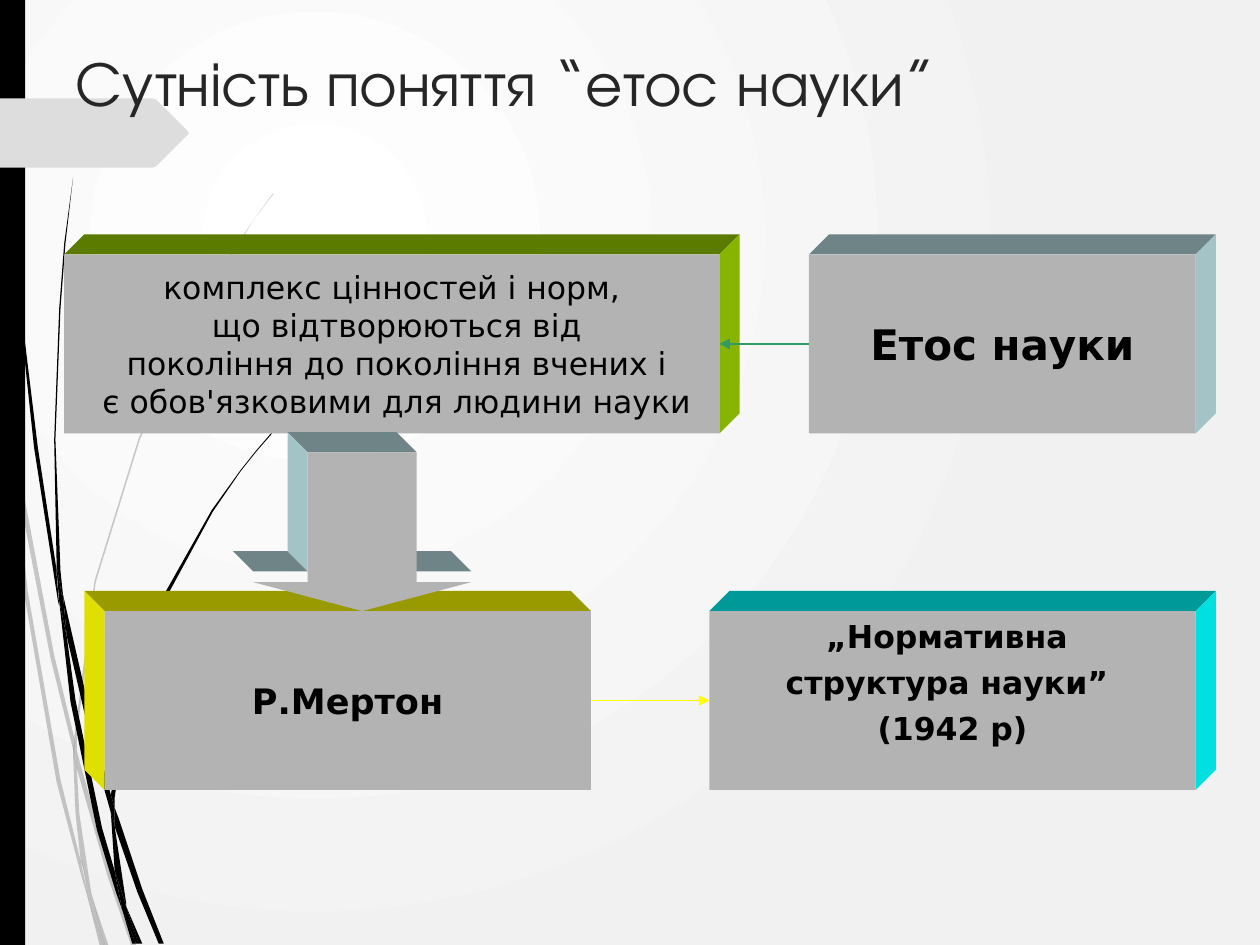
from lxml import etree
from pptx import Presentation
from pptx.dml.color import RGBColor
from pptx.enum import shapes, text
from pptx.oxml import parse_xml
from pptx.oxml.ns import nsdecls, qn
from pptx.util import Inches, Pt

COLORS = {
    "ink": "000000", "title": "262626", "tag": "DDDDDD", "front": "B3B3B3",
    "centre": "FFFFFF", "edge": "F1F1F1",
    "green top": "5A7A00", "green side": "86B400",
    "steel top": "6E8486", "steel side": "A3C3C6",
    "yellow top": "999900", "yellow side": "E0E000",
    "cyan top": "009999", "cyan side": "00E0E0",
    "green line": "339966", "yellow line": "FFFF00",
}
DEPTH = 0.16
BOX_HEIGHT = 1.42

# Outlines of the grass blades, in inches
PALE_BLADES = [
    [(.08, 3.5), (.06, 3.22), (0, 2.82), (0, 2.99), (.07, 3.44)],
    [(.4, 5.22), (.59, 5.99), (.59, 5.86), (.43, 5.2), (.1, 3.45), (.12, 3.76)],
    [(.64, 6.07), (.61, 5.96), (.61, 6.1), (.85, 6.94), (1.04, 7.5), (1.08, 7.5), (.88, 6.92)],
    [(.83, 7.5), (.86, 7.5), (.73, 7.11)],
    [(.64, 6.83), (.48, 6.19), (.22, 4.69), (.12, 3.76), (.08, 3.5), (.19, 4.7), (.45, 6.21),
     (.64, 6.93), (.7, 7.14), (.69, 7.07)],
    [(.58, 5.99), (.6, 6.46), (.64, 6.83), (.67, 6.92), (.73, 7.11), (.72, 7.06), (.63, 6.46),
     (.61, 6.1), (.61, 6.08)],
    [(.61, 5.84), (.76, 4.62), (1.11, 3.49), (1.59, 2.45), (1.87, 1.98), (2.01, 1.75),
     (2.17, 1.54), (2.17, 1.53), (2.01, 1.75), (1.86, 1.97), (1.58, 2.44), (1.1, 3.48),
     (.75, 4.61), (.59, 5.84), (.59, 5.86), (.61, 5.96)],
    [(.7, 7.14), (.79, 7.5), (.82, 7.5)],
    [(.61, 6.08), (.61, 6.1), (.61, 5.96), (.59, 5.86), (.58, 5.99)],
    [(.67, 6.92), (.65, 6.83), (.69, 7.07), (.7, 7.14), (.82, 7.5), (.83, 7.5), (.73, 7.11)],
]
DARK_BLADES = [
    [(.05, 1.1), (.14, 2.33), (.27, 3.55), (.46, 4.77), (.47, 4.81), (.45, 4.57), (.45, 4.53),
     (.3, 3.55), (.15, 2.32), (.06, 1.09), (.04, .48), (.03, 0), (.02, 0), (.03, .48)],
    [(.73, 5.92), (.88, 6.45), (.88, 6.33), (.88, 6.31), (.77, 5.9), (.5, 4.72), (.53, 5.05)],
    [(.94, 6.49), (.91, 6.41), (.91, 6.56), (1.09, 7.08), (1.26, 7.49), (1.3, 7.49), (1.13, 7.06)],
    [(.91, 6.91), (.81, 6.57), (.6, 5.56), (.53, 5.05), (.47, 4.77), (.56, 5.57), (.77, 6.59),
     (.92, 7.08), (.97, 7.22), (.96, 7.17)],
    [(.5, 4.72), (.48, 4.53), (.44, 3.49), (.48, 2.45), (.52, 1.93), (.58, 1.41), (.51, 1.93),
     (.47, 2.45), (.43, 3.49), (.45, 4.49), (.49, 4.72)],
    [(1.1, 7.49), (1.13, 7.49), (1, 7.19)],
    [(.47, 4.77), (.53, 5.05), (.5, 4.72), (.49, 4.72), (.45, 4.49), (.45, 4.53)],
    [(.91, 6.33), (1.03, 5.52), (1.31, 4.76), (1.69, 4.06), (1.91, 3.74), (2.03, 3.59),
     (2.16, 3.44), (2.15, 3.44), (2.03, 3.58), (1.91, 3.73), (1.68, 4.05), (1.29, 4.74),
     (1.01, 5.51), (.88, 6.31), (.91, 6.41)],
    [(.97, 7.22), (1.05, 7.49), (1.08, 7.49)],
    [(.88, 6.45), (.91, 6.91), (.96, 7.06), (1, 7.19), (1, 7.16), (.91, 6.56), (.9, 6.51)],
    [(.88, 6.45), (.9, 6.51), (.91, 6.56), (.91, 6.41), (.88, 6.31), (.88, 6.33)],
    [(.96, 7.06), (.91, 6.91), (.96, 7.17), (.97, 7.22), (1.08, 7.49), (1.1, 7.49), (1, 7.19)],
]
TAG = [(0, .78), (1.21, .78), (1.24, .79), (1.49, 1.04), (1.5, 1.06), (1.49, 1.07),
       (1.24, 1.32), (1.21, 1.33), (0, 1.33)]


class SlideBuilder:
    font = "DejaVu Sans"
    title_font = "TeX Gyre Adventor"

    def __init__(self, slide):
        self.slide = slide

    def paint(self, shape, color, alpha=None):
        shape.shadow.inherit = False
        shape.fill.solid()
        shape.fill.fore_color.rgb = RGBColor.from_string(COLORS[color])
        shape.line.fill.background()
        if alpha is not None:
            fill_color = shape._element.spPr.find(qn("a:solidFill"))[0]
            etree.SubElement(fill_color, qn("a:alpha")).set("val", str(alpha * 1000))
        return shape

    def background(self):
        stops = "".join(
            f'<a:gs pos="{position}"><a:srgbClr val="{COLORS[color]}"/></a:gs>'
            for position, color in ((0, "centre"), (100000, "edge")))
        self.slide.background.fill.solid()
        properties = self.slide._element.cSld.bg.bgPr
        properties.replace(properties[0], parse_xml(
            f'<a:gradFill {nsdecls("a")} rotWithShape="1"><a:gsLst>{stops}</a:gsLst>'
            '<a:path path="circle"><a:fillToRect l="50000" t="50000" r="100000" b="100000"/>'
            '</a:path></a:gradFill>'))

    def preset(self, kind, left, top, width, height, color):
        shape = self.slide.shapes.add_shape(
            kind, Inches(left), Inches(top), Inches(width), Inches(height))
        return self.paint(shape, color)

    def polygon(self, points, color, alpha=None):
        start, *rest = [(Inches(x), Inches(y)) for x, y in points]
        builder = self.slide.shapes.build_freeform(*start)
        builder.add_line_segments(rest, close=True)
        return self.paint(builder.convert_to_shape(), color, alpha)

    def extrusion(self, start, end, shift, color):
        """Fill the band between an edge and the same edge moved back."""
        (x1, y1), (x2, y2) = start, end
        self.polygon([start, end, (x2 + shift, y2 - DEPTH), (x1 + shift, y1 - DEPTH)], color)

    def add_lines(self, frame, lines, size, color="ink", font=None, bold=False,
                  align=text.PP_ALIGN.CENTER, space=0):
        for index, line in enumerate(lines):
            paragraph = frame.paragraphs[0] if index == 0 else frame.add_paragraph()
            paragraph.alignment = align
            paragraph.space_before = Pt(space)
            run = paragraph.add_run()
            run.text = line
            run.font.name = font or self.font
            run.font.size = Pt(size)
            run.font.bold = bold
            run.font.color.rgb = RGBColor.from_string(COLORS[color])

    def title(self, content):
        box = self.slide.shapes.add_textbox(Inches(0.5), Inches(0.3), Inches(9), Inches(0.93))
        box.text_frame.word_wrap = True
        self.add_lines(box.text_frame, [content], 36, "title", self.title_font,
                       align=text.PP_ALIGN.LEFT)

    def box(self, left, top, width, hue, lines, size, bold=True, space=0,
            side="right", anchor=text.MSO_ANCHOR.MIDDLE):
        right, bottom = left + width, top + BOX_HEIGHT
        shift, edge = (DEPTH, right) if side == "right" else (-DEPTH, left)
        self.extrusion((left, top), (right, top), shift, hue + " top")
        self.extrusion((edge, top), (edge, bottom), shift, hue + " side")
        shape = self.preset(shapes.MSO_SHAPE.RECTANGLE, left, top, width, BOX_HEIGHT, "front")
        shape.text_frame.word_wrap = False
        shape.text_frame.vertical_anchor = anchor
        self.add_lines(shape.text_frame, lines, size, bold=bold, space=space)
        return shape

    def down_arrow(self, left, top, width, height, hue):
        stem_left, stem_right = left + width / 4, left + width * 3 / 4
        neck = top + height - width / 4 * height / width
        for x1, x2, y in ((left, stem_left, neck), (stem_right, left + width, neck),
                          (stem_left, stem_right, top)):
            self.extrusion((x1, y), (x2, y), -DEPTH, hue + " top")
        self.extrusion((stem_left, top), (stem_left, neck), -DEPTH, hue + " side")
        shape = self.preset(shapes.MSO_SHAPE.DOWN_ARROW, left, top, width, height, "front")
        shape.adjustments[0], shape.adjustments[1] = 0.5, height / width / 4

    def connect(self, source, source_side, target, target_side, color):
        line = self.slide.shapes.add_connector(shapes.MSO_CONNECTOR.STRAIGHT, 0, 0, 0, 0)
        line.begin_connect(source, source_side)
        line.end_connect(target, target_side)
        line.line.width = Pt(0.75)
        line.line.color.rgb = RGBColor.from_string(COLORS[color])
        properties = line._element.spPr
        etree.SubElement(properties.find(qn("a:ln")), qn("a:tailEnd")).set("type", "triangle")
        etree.SubElement(properties, qn("a:effectLst"))


def main():
    presentation = Presentation()
    presentation.slide_width, presentation.slide_height = Inches(10), Inches(7.5)
    builder = SlideBuilder(presentation.slides.add_slide(presentation.slide_layouts[6]))

    # Backdrop
    builder.background()
    for blade in PALE_BLADES:
        builder.polygon(blade, "ink", alpha=20)
    for blade in DARK_BLADES:
        builder.polygon(blade, "ink")
    builder.preset(shapes.MSO_SHAPE.RECTANGLE, 0, 0, 0.2, 7.5, "ink")
    builder.polygon(TAG, "tag")
    builder.title("Сутність поняття “етос науки”")

    # Boxes
    ethos = builder.box(6.42, 2.02, 3.07, "steel", ["Етос науки"], 24)
    definition = builder.box(0.51, 2.02, 5.2, "green", [
        "комплекс цінностей і норм,", " що відтворюються від",
        " покоління до покоління вчених і", " є обов'язковими для людини науки",
    ], 18, bold=False)
    merton = builder.box(0.83, 4.85, 3.86, "yellow", ["Р.Мертон"], 20, side="left")
    work = builder.box(5.63, 4.85, 3.86, "cyan", [
        "„Нормативна ", "структура науки” ", "(1942 р)",
    ], 18, space=4.5, anchor=text.MSO_ANCHOR.TOP)

    # Arrows
    builder.down_arrow(2.01, 3.59, 1.73, 1.26, "steel")
    builder.connect(ethos, 1, definition, 3, "green line")
    builder.connect(merton, 3, work, 1, "yellow line")

    presentation.save("out.pptx")


if __name__ == "__main__":
    main()
